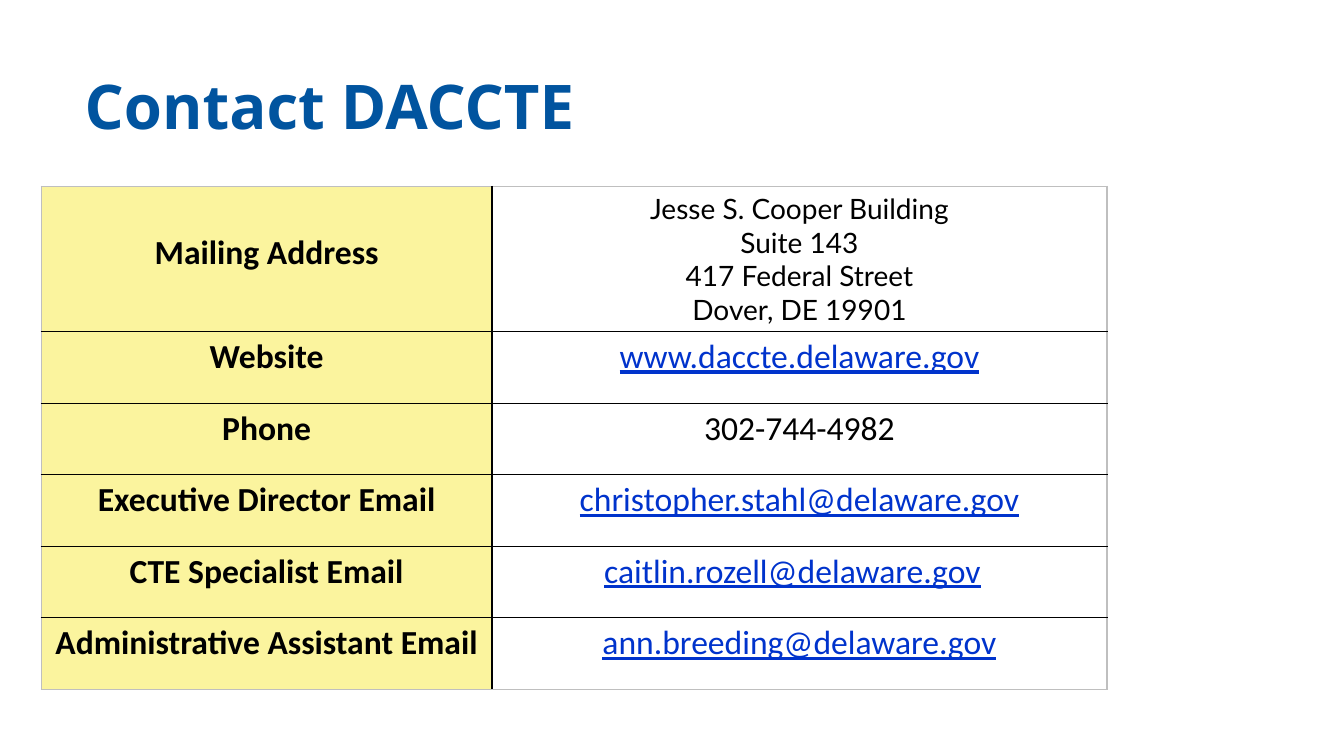
from dataclasses import dataclass

from lxml.etree import SubElement
from pptx import Presentation
from pptx.dml.color import RGBColor
from pptx.enum.text import MSO_ANCHOR, PP_ALIGN
from pptx.oxml.ns import qn
from pptx.util import Pt

PX = 9144  # EMU per px, 100 px to the inch


@dataclass(frozen=True)
class Theme:
    title: str = "01549F"
    text: str = "000000"
    link: str = "0033CC"
    label_fill: str = "FBF49E"
    inner_line: str = "000000"
    outer_line: str = "BFBFBF"
    title_font: str = "Noto Sans"
    body_font: str = "Calibri"
    address_font: str = "Lato"
    title_size: int = 44
    body_size: int = 24
    address_size: int = 20


def px(n):
    return n * PX


def write(tf, text, *, font, size, color, bold=False, underline=False,
          align=PP_ALIGN.CENTER):
    """Fill a text frame, one paragraph per line of text."""
    for i, line in enumerate(text.split("\n")):
        p = tf.paragraphs[0] if i == 0 else tf.add_paragraph()
        p.alignment = align
        r = p.add_run()
        r.text = line
        r.font.name = font
        r.font.size = Pt(size)
        r.font.bold = bold
        r.font.underline = underline
        r.font.color.rgb = RGBColor.from_string(color)


def set_borders(cell, colors):
    """Draw the left, right, top and bottom borders in the given colours."""
    tc_pr = cell._tc.get_or_add_tcPr()
    for i, (side, color) in enumerate(zip("LRTB", colors)):
        ln = SubElement(tc_pr, qn(f"a:ln{side}"), w=str(Pt(1)))
        fill = SubElement(ln, qn("a:solidFill"))
        SubElement(fill, qn("a:srgbClr"), val=color)
        tc_pr.insert(i, ln)


class ContactSlide:
    def __init__(self, prs, theme):
        self.theme = theme
        self.s = prs.slides.add_slide(prs.slide_layouts[5])

    def title(self, text, left, top, width, height):
        t = self.theme
        sp = self.s.shapes.title
        sp.left, sp.top, sp.width, sp.height = map(px, (left, top, width, height))
        tf = sp.text_frame
        tf.word_wrap = True
        tf.vertical_anchor = MSO_ANCHOR.TOP
        tf.margin_top = 0
        write(tf, text, font=t.title_font, size=t.title_size, color=t.title,
              bold=True, align=PP_ALIGN.LEFT)

    def table(self, rows, left, top, col_widths, row_heights):
        t = self.theme
        frame = self.s.shapes.add_table(
            len(rows), len(col_widths), px(left), px(top),
            px(sum(col_widths)), px(sum(row_heights)))
        table = frame.table
        table.first_row = table.horz_banding = False
        for col, width in zip(table.columns, col_widths):
            col.width = px(width)
        for row, height in zip(table.rows, row_heights):
            row.height = px(height)
        for i, (label, value, style) in enumerate(rows):
            name, detail = table.cell(i, 0), table.cell(i, 1)
            name.fill.solid()
            name.fill.fore_color.rgb = RGBColor.from_string(t.label_fill)
            detail.fill.background()
            write(name.text_frame, label, font=t.body_font, size=t.body_size,
                  color=t.text, bold=True)
            base = dict(font=t.body_font, size=t.body_size, color=t.text)
            write(detail.text_frame, value, **{**base, **style})
            above = t.inner_line if i else t.outer_line
            below = t.inner_line if i < len(rows) - 1 else t.outer_line
            set_borders(name, (t.outer_line, t.inner_line, above, below))
            set_borders(detail, (t.inner_line, t.outer_line, above, below))
        return table


def main():
    prs = Presentation()
    prs.slide_width, prs.slide_height = px(1333), px(750)
    theme = Theme()
    link = dict(color=theme.link, underline=True)
    address = dict(font=theme.address_font, size=theme.address_size)
    rows = [
        ("Mailing Address",
         "Jesse S. Cooper Building\nSuite 143\n417 Federal Street\nDover, DE 19901",
         address),
        ("Website", "www.daccte.delaware.gov", link),
        ("Phone", "302-744-4982", {}),
        ("Executive Director Email", "christopher.stahl@delaware.gov", link),
        ("CTE Specialist Email", "caitlin.rozell@delaware.gov", link),
        ("Administrative Assistant Email", "ann.breeding@delaware.gov", link),
    ]
    slide = ContactSlide(prs, theme)
    slide.title("Contact DACCTE", 74, 67, 940, 144)
    table = slide.table(rows, 41, 185, (447, 610), [143] + [71] * 5)
    table.cell(0, 0).margin_top = px(46)
    table.cell(4, 1).margin_right = px(24)
    prs.save("out.pptx")


if __name__ == "__main__":
    main()
